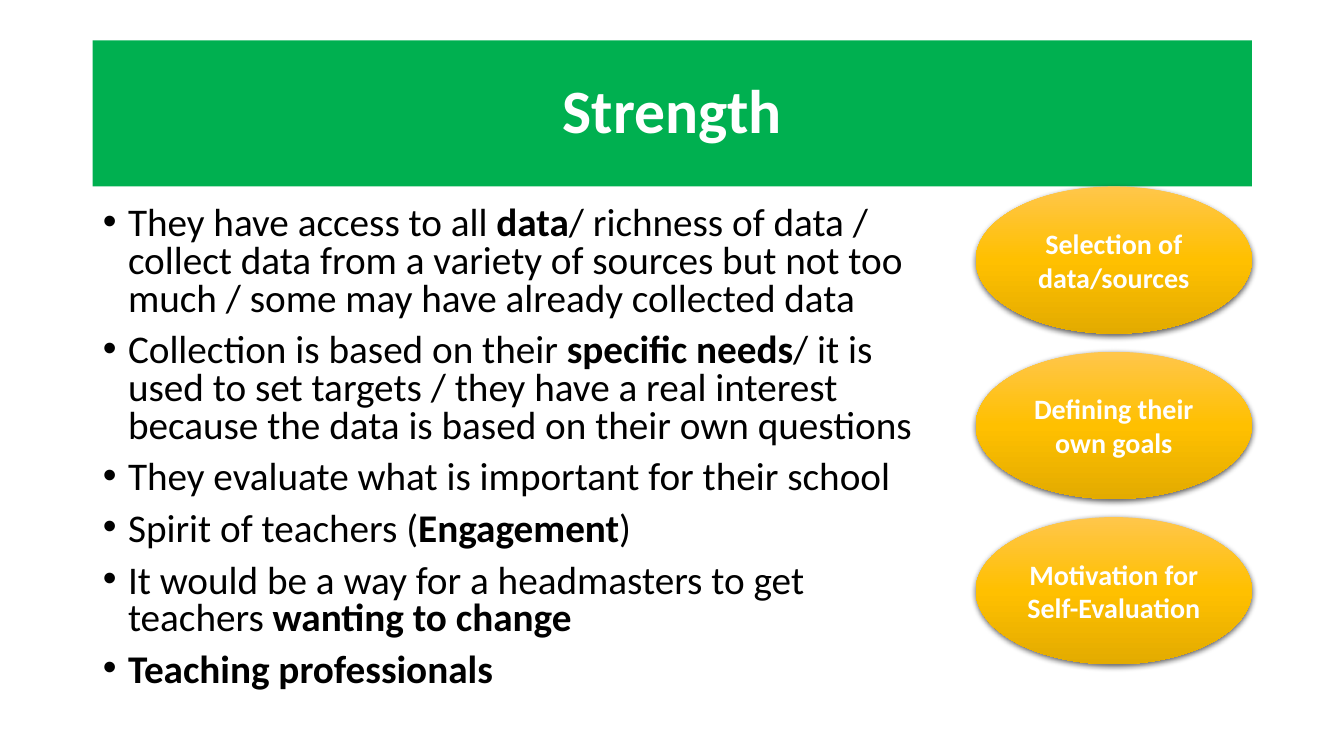
from dataclasses import dataclass

from lxml import etree
from pptx import Presentation, util as u
from pptx.dml.color import RGBColor
from pptx.enum import shapes, text
from pptx.oxml import ns


@dataclass(frozen=True)
class Theme:
    font: str = "Calibri"
    banner: str = "00B050"
    ink: str = "000000"
    light: str = "FFFFFF"
    gold: tuple = ((0, "FFC64B"), (50, "FFC000"), (100, "E3AB00"))
    title_size: int = 44
    body_size: int = 28
    oval_size: int = 20


def add_xml(parent, tag, **attributes):
    values = {name: str(value) for name, value in attributes.items()}
    return etree.SubElement(parent, ns.qn(tag), values)


class StrengthPage:
    """Places styled elements on a grid of 100 columns by 100 rows."""

    def __init__(self, deck, theme):
        self.theme = theme
        self.column = deck.slide_width / 100
        self.row = deck.slide_height / 100
        self.page = deck.slides.add_slide(deck.slide_layouts[1])

    def area(self, left, top, width, height):
        return [u.Emu(round(count * unit)) for count, unit in zip(
            (left, top, width, height), (self.column, self.row) * 2)]

    def move(self, box, *cells):
        box.left, box.top, box.width, box.height = self.area(*cells)

    def style(self, para, size, color, bold=None):
        para.font.name = self.theme.font
        para.font.size = u.Pt(size)
        para.font.color.rgb = RGBColor.from_string(color)
        para.font.bold = bold

    def prepare(self, box, anchor):
        frame = box.text_frame
        frame.word_wrap = True
        frame.auto_size = text.MSO_AUTO_SIZE.NONE
        frame.vertical_anchor = anchor
        return frame

    def title(self, wording, *cells):
        box = self.page.shapes.title
        self.move(box, *cells)
        box.fill.solid()
        box.fill.fore_color.rgb = RGBColor.from_string(self.theme.banner)
        frame = self.prepare(box, text.MSO_ANCHOR.MIDDLE)
        frame.text = wording
        para = frame.paragraphs[0]
        para.alignment = text.PP_ALIGN.CENTER
        para.line_spacing = 0.9
        self.style(para, self.theme.title_size, self.theme.light, True)

    def bullets(self, items, *cells):
        """Fill the body; every second part of an item is bold."""
        box = self.page.placeholders[1]
        self.move(box, *cells)
        frame = self.prepare(box, text.MSO_ANCHOR.TOP)
        for number, parts in enumerate(items):
            para = frame.add_paragraph() if number else frame.paragraphs[0]
            para.line_spacing = 0.8
            para.space_before = u.Pt(10)
            self.style(para, self.theme.body_size, self.theme.ink)
            indent = int(u.Inches(0.25))
            properties = para._p.get_or_add_pPr()
            properties.set("marL", str(indent))
            properties.set("indent", str(-indent))
            for position, wording in enumerate(parts):
                if wording:
                    span = para.add_run()
                    span.text = wording
                    span.font.bold = position % 2 == 1

    def oval(self, wording, *cells):
        box = self.page.shapes.add_shape(
            shapes.MSO_SHAPE.OVAL, *self.area(*cells))
        box.line.fill.background()
        self.gild(box)
        self.cast_shadow(box)
        frame = self.prepare(box, text.MSO_ANCHOR.MIDDLE)
        frame.text = wording
        para = frame.paragraphs[0]
        para.alignment = text.PP_ALIGN.CENTER
        self.style(para, self.theme.oval_size, self.theme.light, True)

    def gild(self, box):
        box.fill.gradient()
        box.fill.gradient_angle = 270
        stops = box._element.spPr.find(".//" + ns.qn("a:gsLst"))
        for stop in list(stops):
            stops.remove(stop)
        for percent, color in self.theme.gold:
            stop = add_xml(stops, "a:gs", pos=percent * 1000)
            add_xml(stop, "a:srgbClr", val=color)

    def cast_shadow(self, box):
        box.shadow.inherit = False
        effects = box._element.spPr.find(ns.qn("a:effectLst"))
        shadow = add_xml(effects, "a:outerShdw", blurRad=int(u.Pt(4.5)),
                         dist=int(u.Pt(1.5)), dir=90 * 60000,
                         algn="ctr", rotWithShape=0)
        color = add_xml(shadow, "a:srgbClr", val=self.theme.ink)
        add_xml(color, "a:alpha", val=63000)


STRENGTHS = (
    ("They have access to all ", "data",
     "/ richness of data / collect data from a variety of sources but not "
     "too much / some may have already collected data"),
    ("Collection is based on their ", "specific needs",
     "/ it is used to set targets / they have a real interest because the "
     "data is based on their own questions"),
    ("They evaluate what is important for their school",),
    ("Spirit of teachers (", "Engagement", ")"),
    ("It would be a way for a headmasters to get teachers ",
     "wanting to change"),
    ("", "Teaching professionals"),
)
THEMES = ("Selection of data/sources", "Defining their own goals",
          "Motivation for Self-Evaluation")


def main():
    deck = Presentation()
    deck.slide_width, deck.slide_height = u.Inches(13.33), u.Inches(7.5)
    page = StrengthPage(deck, Theme())
    left, width, oval_width = 6.9, 86.25, 20.55
    banner_top, banner_height = 5.33, 19.33
    page.title("Strength", left, banner_top, width, banner_height)
    page.bullets(STRENGTHS, left, 26.67, 63.08, 67.73)
    for number, wording in enumerate(THEMES):
        page.oval(wording, left + width - oval_width,
                  banner_top + banner_height + number * 21.87,
                  oval_width, 19.47)
    deck.save("out.pptx")


if __name__ == "__main__":
    main()
